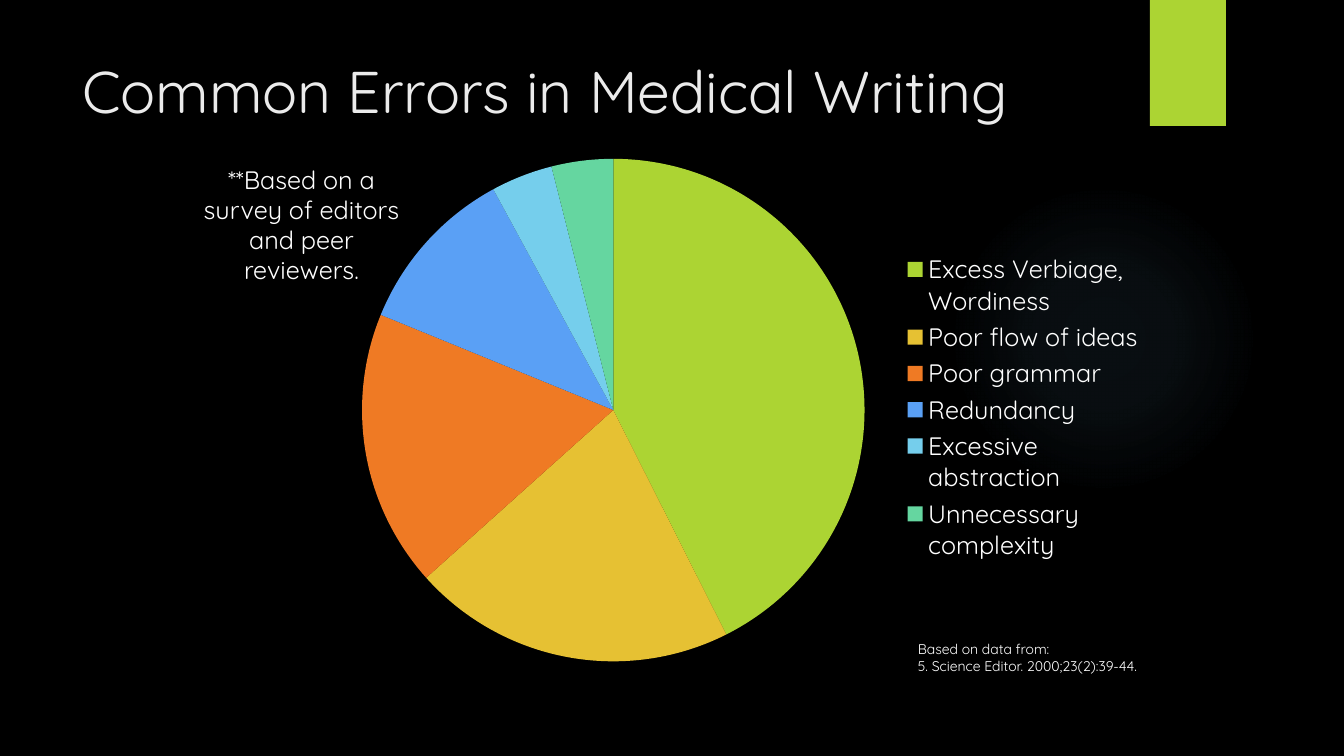
from lxml import etree
from pptx import Presentation
from pptx.chart.data import CategoryChartData
from pptx.dml.color import RGBColor
from pptx.enum.chart import XL_CHART_TYPE as ChartType, XL_LEGEND_POSITION as LegendPos
from pptx.enum.shapes import MSO_SHAPE as Shape
from pptx.enum.text import MSO_ANCHOR as Anchor, MSO_AUTO_SIZE as AutoSize, PP_ALIGN as Align
from pptx.oxml import parse_xml
from pptx.oxml.ns import nsdecls, qn
from pptx.util import Pt

PX = 12192000 / 1344
COLORS = {"background": "000000", "accent": "ACD433", "glow": "7AC4F0",
          "title": "EBEBEB", "text": "FFFFFF"}
FONT = "Quicksand"


def box(*lengths):
    return [round(length * PX) for length in lengths]


def place_in_chart(part, index, **fractions):
    """Give a chart part a manual layout, as fractions of the chart."""
    for old in part.findall(qn("c:layout")):
        part.remove(old)
    layout = etree.Element(qn("c:layout"))
    manual = etree.SubElement(layout, qn("c:manualLayout"))
    if part.tag == qn("c:plotArea"):
        etree.SubElement(manual, qn("c:layoutTarget")).set("val", "inner")
    for tag, value in {"xMode": "edge", "yMode": "edge", **fractions}.items():
        etree.SubElement(manual, qn(f"c:{tag}")).set("val", str(value))
    part.insert(index, layout)


prs = Presentation()
prs.slide_width, prs.slide_height = box(1344, 756)
slide = prs.slides.add_slide(prs.slide_layouts[5])
slide.background.fill.solid()
slide.background.fill.fore_color.rgb = RGBColor.from_string(COLORS["background"])

# Soft glow and corner tab
glow = slide.shapes.add_shape(Shape.OVAL, *box(949, 184, 310, 310))
tab = slide.shapes.add_shape(Shape.RECTANGLE, *box(1150, 0, 76, 126))
for decoration in (glow, tab):
    decoration.shadow.inherit = False
    decoration.line.fill.background()
tab.fill.solid()
tab.fill.fore_color.rgb = RGBColor.from_string(COLORS["accent"])
stops = "".join(
    f'<a:gs pos="{pos * 1000}"><a:srgbClr val="{COLORS["glow"]}">'
    f'<a:alpha val="{alpha * 1000}"/></a:srgbClr></a:gs>'
    for pos, alpha in ((0, 7), (36, 6), (69, 0), (100, 0)))
glow_fill = parse_xml(
    f'<a:gradFill {nsdecls("a")} rotWithShape="1"><a:gsLst>{stops}</a:gsLst>'
    '<a:path path="circle"><a:fillToRect l="50000" t="50000" r="50000" b="50000"/>'
    '</a:path></a:gradFill>')
glow.element.spPr.find(qn("a:prstGeom")).addnext(glow_fill)

# Pie of error shares
errors = [
    ("Excess Verbiage, Wordiness", 43, "ACD433"),
    ("Poor flow of ideas", 21, "E6C133"),
    ("Poor grammar", 18, "EF7A24"),
    ("Redundancy", 11, "5AA0F5"),
    ("Excessive abstraction", 4, "75CEEC"),
    ("Unnecessary complexity", 4, "65D6A0"),
]
shares = CategoryChartData(number_format="General")
shares.categories = [name for name, _, _ in errors]
shares.add_series("Series 1", [share for _, share, _ in errors])
pie = slide.shapes.add_chart(ChartType.PIE, *box(328, 143, 827, 529), shares).chart
pie.has_title = False
pie.has_legend = True
pie.legend.position = LegendPos.RIGHT
pie.legend.include_in_layout = False
pie.plots[0].vary_by_categories = True
for font in (pie.font, pie.legend.font):
    font.name, font.size = FONT, Pt(18)
    font.color.rgb = RGBColor.from_string(COLORS["text"])
for index, (_, _, color) in enumerate(errors):
    wedge = pie.plots[0].series[0].points[index].format
    wedge.fill.solid()
    wedge.fill.fore_color.rgb = RGBColor.from_string(color)
    wedge.line.fill.background()
plot_area = pie.element.find(f".//{qn('c:plotArea')}") if hasattr(pie, "element") else \
    pie._chartSpace.find(f".//{qn('c:plotArea')}")
place_in_chart(plot_area, 0, x=0.04, y=0.03, w=0.61, h=0.95)
place_in_chart(plot_area.getnext(), 1, x=0.69, y=0.2, w=0.3, h=0.6)

# Title, source and survey note
title = slide.shapes.title
title.left, title.top, title.width, title.height = box(72, 50, 1037, 154)
source = slide.shapes.add_textbox(*box(908, 636, 254, 44))
survey = slide.shapes.add_textbox(*box(184, 159, 235, 132))
texts = [
    (title, ["Common Errors in Medical Writing"], 42, "title", Align.LEFT, True),
    (source, ["Based on data from:", "5. Science Editor. 2000;23(2):39-44."],
     10, "text", Align.LEFT, False),
    (survey, ["**Based on a survey of editors and peer reviewers."],
     18, "text", Align.CENTER, True),
]
for holder, lines, size, color, align, wrap in texts:
    frame = holder.text_frame
    frame.text = "\n".join(lines)
    frame_format = {"word_wrap": wrap, "auto_size": AutoSize.NONE,
                    "vertical_anchor": Anchor.TOP}
    for name, value in frame_format.items():
        setattr(frame, name, value)
    for paragraph in frame.paragraphs:
        paragraph.alignment = align
        for name, value in {"name": FONT, "size": Pt(size)}.items():
            setattr(paragraph.font, name, value)
        paragraph.font.color.rgb = RGBColor.from_string(COLORS[color])

prs.save("out.pptx")
